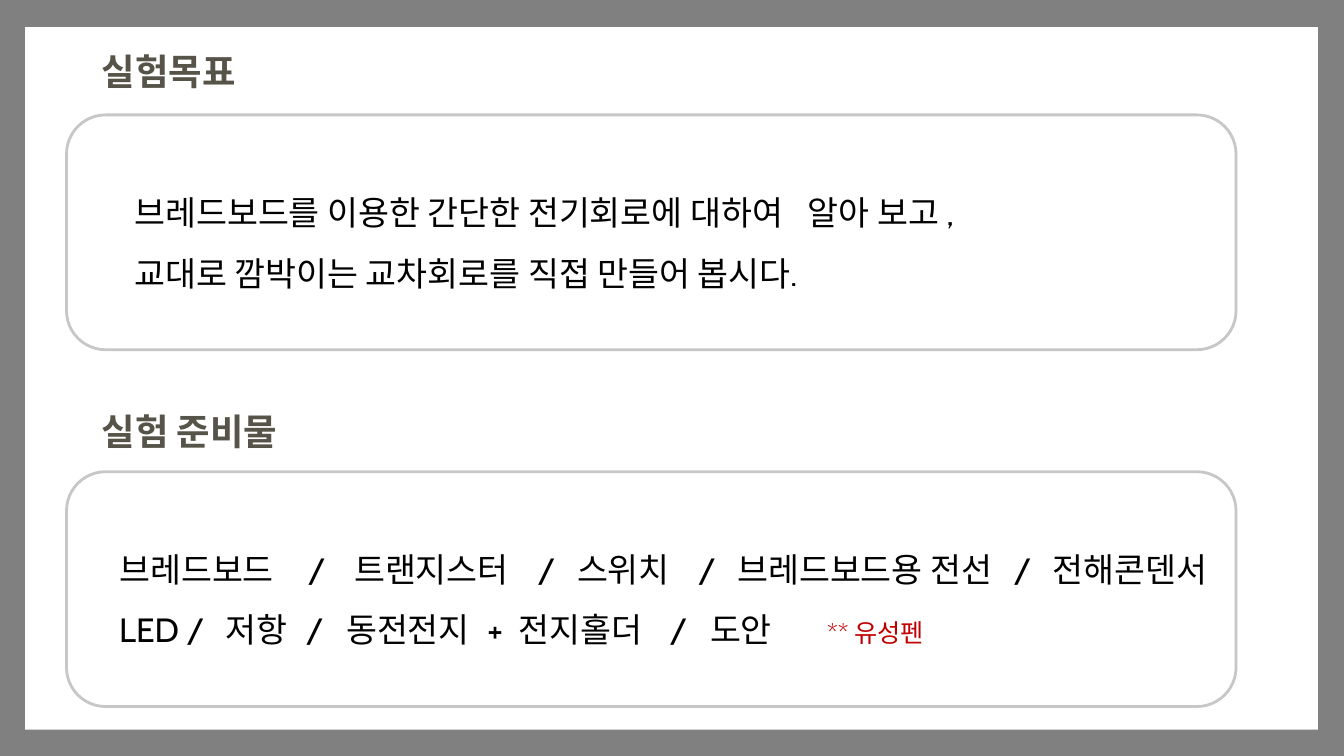
from lxml import etree
from pptx import Presentation
from pptx.dml.color import RGBColor
from pptx.enum import shapes, text
from pptx.oxml import ns
from pptx.util import Inches, Pt


def color(code):
    return RGBColor.from_string(code)


def write(para, words, size=24, ink="000000", bold=False, font="Cabin"):
    run = para.add_run()
    run.text = words
    run.font.name = font
    run.font.size = Pt(size)
    run.font.bold = bold
    run.font.color.rgb = color(ink)


def set_tabs(para, stops):
    props = para._p.get_or_add_pPr()
    tabs = etree.SubElement(props, ns.qn("a:tabLst"))
    for stop in stops:
        etree.SubElement(tabs, ns.qn("a:tab"), pos=str(Inches(stop)), algn="l")


class Deck:
    left, width, height = 0.66, 11.6, 2.33
    curve = 0.11

    def __init__(self):
        self.show = Presentation()
        self.show.slide_width = Inches(13.33)
        self.show.slide_height = Inches(7.5)
        self.slide = self.show.slides.add_slide(self.show.slide_layouts[6])
        back = self.slide.background.fill
        back.solid()
        back.fore_color.rgb = color("808080")

    def shape(self, kind, area, line=None):
        item = self.slide.shapes.add_shape(kind, *map(Inches, area))
        item.shadow.inherit = False
        item.fill.solid()
        item.fill.fore_color.rgb = color("FFFFFF")
        if line:
            item.line.color.rgb = color(line)
            item.line.width = Pt(2)
        else:
            item.line.fill.background()
        return item

    def page(self):
        self.shape(shapes.MSO_SHAPE.RECTANGLE, (0.25, 0.27, 12.82, 6.97))

    def title(self, words, top, width):
        box = self.slide.shapes.add_textbox(*map(Inches, (0.91, top, width, 0.48)))
        frame = box.text_frame
        frame.word_wrap = True
        frame.margin_left = frame.margin_right = Inches(0.1)
        frame.margin_top = frame.margin_bottom = Inches(0.1)
        write(frame.paragraphs[0], words, size=26, ink="565349", bold=True)

    def panel(self, top, start, lines):
        area = (self.left, top, self.width, self.height)
        item = self.shape(shapes.MSO_SHAPE.ROUNDED_RECTANGLE, area, line="C7C7C7")
        frame = item.text_frame
        frame.word_wrap = True
        frame.vertical_anchor = text.MSO_ANCHOR.MIDDLE
        frame.margin_left = Inches(start - self.left - self.curve)
        frame.margin_right = 0
        for row, (runs, stops) in enumerate(lines):
            para = frame.add_paragraph() if row else frame.paragraphs[0]
            para.alignment = text.PP_ALIGN.LEFT
            para.line_spacing = 1.5
            set_tabs(para, [stop - start for stop in stops])
            for words, style in runs:
                write(para, words, **style)


def main():
    deck = Deck()
    deck.page()
    deck.title("실험목표", 0.39, 1.96)
    deck.panel(1.14, 1.33, [
        ([("브레드보드를 이용한 간단한 전기회로에 대하여\t알아 보고 ,", {})], [8.01]),
        ([("교대로 깜박이는 교차회로를 직접 만들어 봅시다.", {})], []),
    ])
    deck.title("실험 준비물", 3.96, 2.3)
    deck.panel(4.68, 1.18, [
        ([("브레드보드\t/\t트랜지스터\t/\t스위치\t/\t브레드보드용 전선\t/\t전해콘덴서", {})],
         [3.05, 3.51, 5.33, 5.72, 6.92, 7.31, 10.05, 10.44]),
        ([("LED /\t저항\t/\t동전전지\t+\t전지홀더\t/\t도안\t", {}),
          ("** 유성펜", {"size": 18, "ink": "C00000"})],
         [2.23, 3.03, 3.43, 4.83, 5.14, 6.64, 7.04, 8.2]),
    ])
    deck.show.save("out.pptx")


if __name__ == "__main__":
    main()
